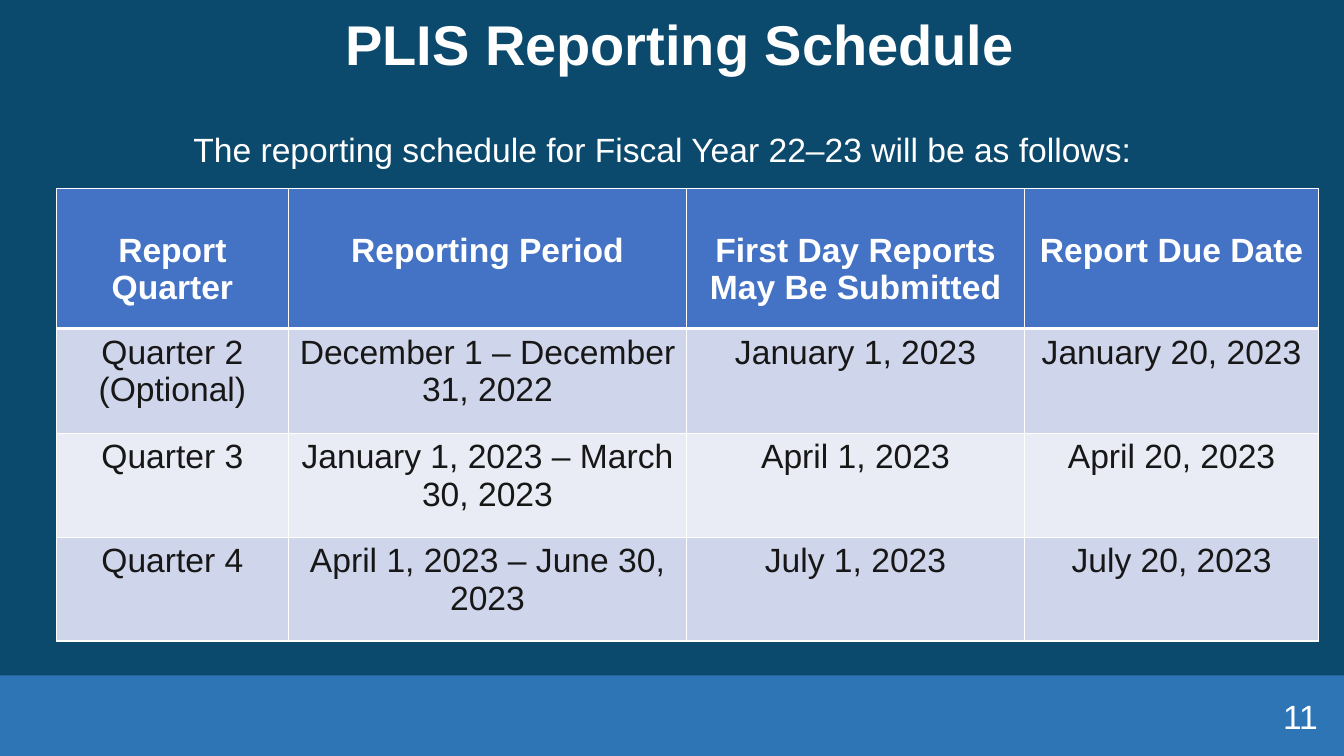
from lxml import etree
from pptx import Presentation
from pptx.dml.color import RGBColor
from pptx.enum.shapes import MSO_SHAPE
from pptx.enum.text import MSO_ANCHOR, PP_ALIGN
from pptx.oxml.ns import qn
from pptx.util import Pt

SCALE = 9144
RECT = MSO_SHAPE.RECTANGLE
TOP, MIDDLE = MSO_ANCHOR.TOP, MSO_ANCHOR.MIDDLE
LEFT, CENTER, RIGHT = PP_ALIGN.LEFT, PP_ALIGN.CENTER, PP_ALIGN.RIGHT
FONT = "Arial"
COLORS = {
    "navy": "0C4A6D",
    "bar": "2E75B6",
    "head": "4472C4",
    "odd": "CFD5EA",
    "even": "E9EBF5",
    "white": "FFFFFF",
    "ink": "181717",
}
WIDTHS = [230, 395, 335, 292]
HEIGHTS = [139, 104, 103, 103]
ROWS = [
    ["Report Quarter", "Reporting Period",
     "First Day Reports May Be Submitted", "Report Due Date"],
    ["Quarter 2 (Optional)", "December 1 – December 31, 2022",
     "January 1, 2023", "January 20, 2023"],
    ["Quarter 3", "January 1, 2023 – March 30, 2023",
     "April 1, 2023", "April 20, 2023"],
    ["Quarter 4", "April 1, 2023 – June 30, 2023",
     "July 1, 2023", "July 20, 2023"],
]


def px(num):
    return num * SCALE


def rgb(name):
    return RGBColor.from_string(COLORS[name])


def paint(fill, name):
    fill.solid()
    fill.fore_color.rgb = rgb(name)


def write(frame, text, size=24, color="white", bold=False, align=LEFT, space=1.0):
    frame.word_wrap = True
    para = frame.paragraphs[0]
    para.alignment = align
    para.line_spacing = space
    run = para.add_run()
    run.text = text
    run.font.name = FONT
    run.font.size = Pt(size)
    run.font.bold = bold
    run.font.color.rgb = rgb(color)


def add_text(slide, box, text, anchor=TOP, **style):
    frame = slide.shapes.add_textbox(*map(px, box)).text_frame
    frame.vertical_anchor = anchor
    write(frame, text, **style)


def add_bar(slide, box, color):
    bar = slide.shapes.add_shape(RECT, *map(px, box))
    bar.shadow.inherit = False
    paint(bar.fill, color)
    bar.line.fill.background()


def set_edge(cell, pos, side, width):
    line = etree.Element(qn(f"a:ln{side}"), w=str(Pt(width)))
    fill = etree.SubElement(line, qn("a:solidFill"))
    etree.SubElement(fill, qn("a:srgbClr"), val=COLORS["white"])
    cell._tc.get_or_add_tcPr().insert(pos, line)


def fill_cell(cell, text, row):
    head = row == 0
    cell.margin_left = cell.margin_right = cell.margin_bottom = px(5)
    cell.margin_top = px(43 if head else 5)
    cell.vertical_anchor = TOP
    paint(cell.fill, "head" if head else "odd" if row % 2 else "even")
    write(cell.text_frame, text, color="white" if head else "ink",
          bold=head, align=CENTER)
    for pos, side in enumerate("LRTB"):
        thick = (row, side) in ((0, "B"), (1, "T"))
        set_edge(cell, pos, side, 3 if thick else 1)


def add_grid(slide, left, top):
    box = (left, top, sum(WIDTHS), sum(HEIGHTS))
    table = slide.shapes.add_table(len(ROWS), len(WIDTHS), *map(px, box)).table
    table.horz_banding = False
    for col, width in zip(table.columns, WIDTHS):
        col.width = px(width)
    for row, height in zip(table.rows, HEIGHTS):
        row.height = px(height)
    for row, texts in enumerate(ROWS):
        for col, text in enumerate(texts):
            fill_cell(table.cell(row, col), text, row)


def main():
    deck = Presentation()
    deck.slide_width, deck.slide_height = px(1333), px(750)
    slide = deck.slides.add_slide(deck.slide_layouts[6])
    paint(slide.background.fill, "navy")
    add_bar(slide, (0, 670, 1333, 80), "bar")
    add_text(slide, (24, -26, 1300, 145), "PLIS Reporting Schedule",
             anchor=MIDDLE, size=40, bold=True, align=CENTER, space=0.9)
    add_text(slide, (182, 127, 956, 78),
             "The reporting schedule for Fiscal Year 22–23 will be as follows:",
             space=0.9)
    add_grid(slide, 56, 187)
    add_text(slide, (1017, 690, 300, 40), "11", anchor=MIDDLE, align=RIGHT)
    deck.save("out.pptx")


if __name__ == "__main__":
    main()
